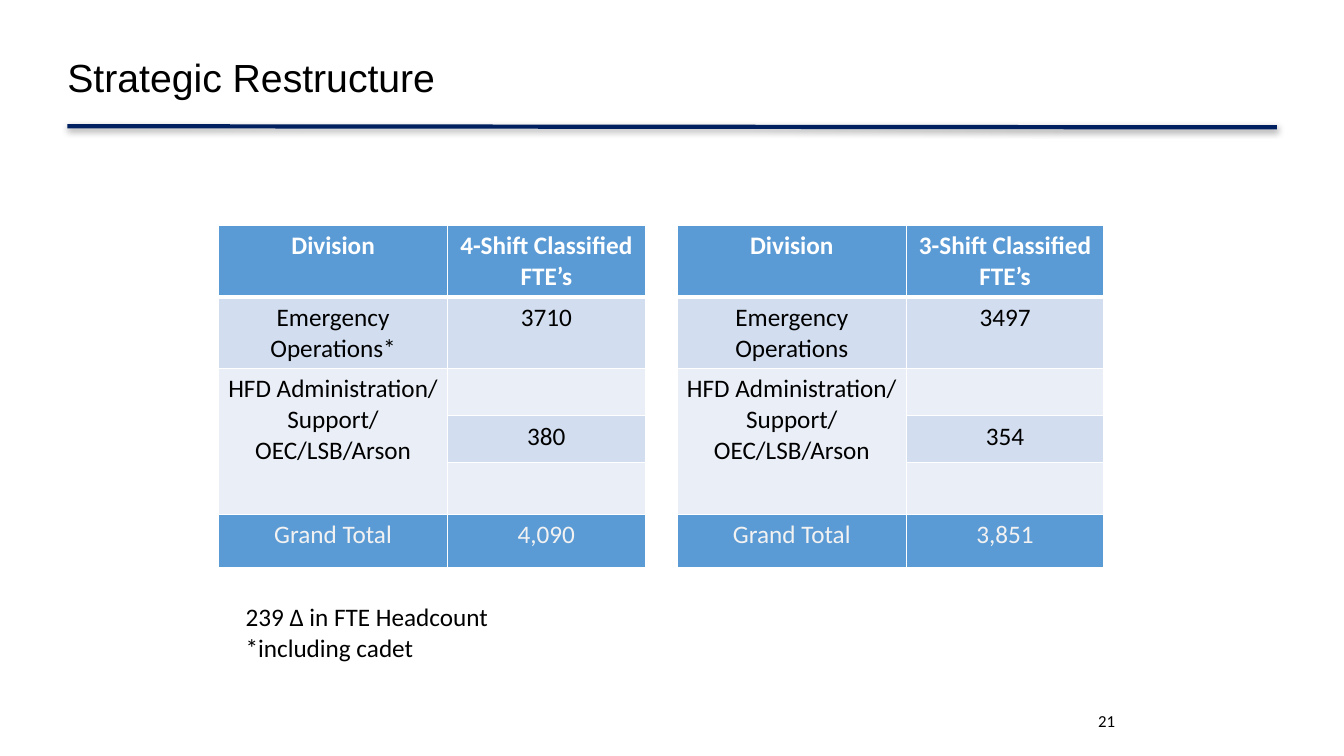
from dataclasses import dataclass

from lxml.etree import SubElement
from pptx import Presentation
from pptx.dml.color import RGBColor as Color
from pptx.enum.shapes import MSO_CONNECTOR as Connector
from pptx.enum.text import MSO_ANCHOR as Anchor, PP_ALIGN as Align
from pptx.oxml import parse_xml
from pptx.oxml.ns import nsdecls, qn
from pptx.util import Cm, Pt


@dataclass(frozen=True)
class Theme:
    title_font: str = "Arial"
    body_font: str = "Calibri"
    title_size: int = 28
    body_size: int = 18
    number_size: int = 12
    ink: str = "000000"
    rule: str = "002060"
    header: str = "5B9BD5"
    band_dark: str = "D2DEEF"
    band_light: str = "EAEFF7"
    white: str = "FFFFFF"
    total_text: str = "F2F2F2"


THEME = Theme()
COLUMN_WIDTHS = (5.77, 4.98)
ROW_HEIGHTS = (1.8, 1.8, 1.19, 1.17, 1.32, 1.32)
ROW_FILLS = (THEME.header, THEME.band_dark, THEME.band_light,
             THEME.band_dark, THEME.band_light, THEME.header)
LAST_ROW = len(ROW_HEIGHTS) - 1


def write_lines(frame, lines, size=THEME.body_size, font=THEME.body_font,
                color=THEME.ink, bold=False, align=Align.LEFT):
    for index, line in enumerate(lines):
        paragraph = frame.paragraphs[0] if index == 0 else frame.add_paragraph()
        paragraph.text = line
        paragraph.alignment = align
        paragraph.font.name = font
        paragraph.font.size = Pt(size)
        paragraph.font.bold = bold
        paragraph.font.color.rgb = Color.from_string(color)


def add_text(slide, left, top, width, height, lines, wrap=True, **style):
    frame = slide.shapes.add_textbox(Cm(left), Cm(top), Cm(width), Cm(height)).text_frame
    frame.word_wrap = wrap
    write_lines(frame, lines, **style)
    return frame


def add_heading(slide, left, top, width, height, text):
    # Title
    frame = add_text(slide, left, top, 23.24, height, [text],
                     size=THEME.title_size, font=THEME.title_font)
    frame.margin_left = frame.margin_right = frame.margin_top = frame.margin_bottom = 0
    frame.vertical_anchor = Anchor.MIDDLE
    frame.paragraphs[0].line_spacing = 0.9

    # Rule with a soft shadow below the title
    bottom = top + height
    rule = slide.shapes.add_connector(Connector.STRAIGHT, Cm(left), Cm(bottom),
                                      Cm(left + width), Cm(bottom + 0.03))
    rule.line.color.rgb = Color.from_string(THEME.rule)
    rule.line.width = Pt(3)
    effects = SubElement(rule.element.spPr, qn("a:effectLst"))
    shadow = SubElement(effects, qn("a:outerShdw"), blurRad=str(Pt(5)),
                        dist=str(Pt(1.6)), dir="5400000", rotWithShape="0")
    shadow_color = SubElement(shadow, qn("a:srgbClr"), val=THEME.ink)
    SubElement(shadow_color, qn("a:alpha"), val="38000")


def set_borders(cell, row):
    properties = cell._tc.get_or_add_tcPr()
    widths = {"lnL": 1, "lnR": 1, "lnT": 3 if row == 1 else 1, "lnB": 3 if row == 0 else 1}
    for position, (side, width) in enumerate(widths.items()):
        properties.insert(position, parse_xml(
            f'<a:{side} {nsdecls("a")} w="{Pt(width)}"><a:solidFill>'
            f'<a:srgbClr val="{THEME.white}"/></a:solidFill></a:{side}>'))


def add_headcount_table(slide, left, top, shift, operations, counts):
    shape = slide.shapes.add_table(len(ROW_HEIGHTS), len(COLUMN_WIDTHS), Cm(left), Cm(top),
                                   Cm(sum(COLUMN_WIDTHS)), Cm(sum(ROW_HEIGHTS)))
    table = shape.table
    for column, width in zip(table.columns, COLUMN_WIDTHS):
        column.width = Cm(width)
    for row, height in zip(table.rows, ROW_HEIGHTS):
        row.height = Cm(height)

    # The support division spans three rows
    emergency, support, total = counts
    divisions = (["Division"], [operations],
                 ["HFD Administration/ Support/", "OEC/LSB/Arson"],
                 [""], [""], ["Grand Total"])
    values = ([f"{shift}-Shift Classified FTE’s"], [emergency], [""], [support], [""], [total])
    table.cell(2, 0).merge(table.cell(4, 0))

    for row, texts in enumerate(zip(divisions, values)):
        color = {0: THEME.white, LAST_ROW: THEME.total_text}.get(row, THEME.ink)
        for column, lines in enumerate(texts):
            cell = table.cell(row, column)
            cell.margin_left = cell.margin_right = Cm(0.15)
            cell.margin_top = cell.margin_bottom = Cm(0.13)
            cell.fill.solid()
            cell.fill.fore_color.rgb = Color.from_string(ROW_FILLS[row])
            set_borders(cell, row)
            write_lines(cell.text_frame, lines, color=color, bold=row == 0,
                        align=Align.CENTER)


def main():
    presentation = Presentation()
    presentation.slide_width, presentation.slide_height = Cm(33.87), Cm(19.05)
    slide = presentation.slides.add_slide(presentation.slide_layouts[6])

    add_heading(slide, 1.7, 0.84, 30.48, 2.34, "Strategic Restructure")

    # Headcount by shift model
    add_headcount_table(slide, 5.51, 5.69, 4, "Emergency Operations*", ("3710", "380", "4,090"))
    add_headcount_table(slide, 17.07, 5.69, 3, "Emergency Operations", ("3497", "354", "3,851"))

    # Footnote and page number
    add_text(slide, 5.94, 15.04, 6.83, 1.8,
             ["239 Δ in FTE Headcount", "*including cadet"], wrap=False)
    add_text(slide, 22.43, 17.78, 5.92, 1.02, ["21"],
             size=THEME.number_size, align=Align.RIGHT)

    presentation.save("out.pptx")


if __name__ == "__main__":
    main()
